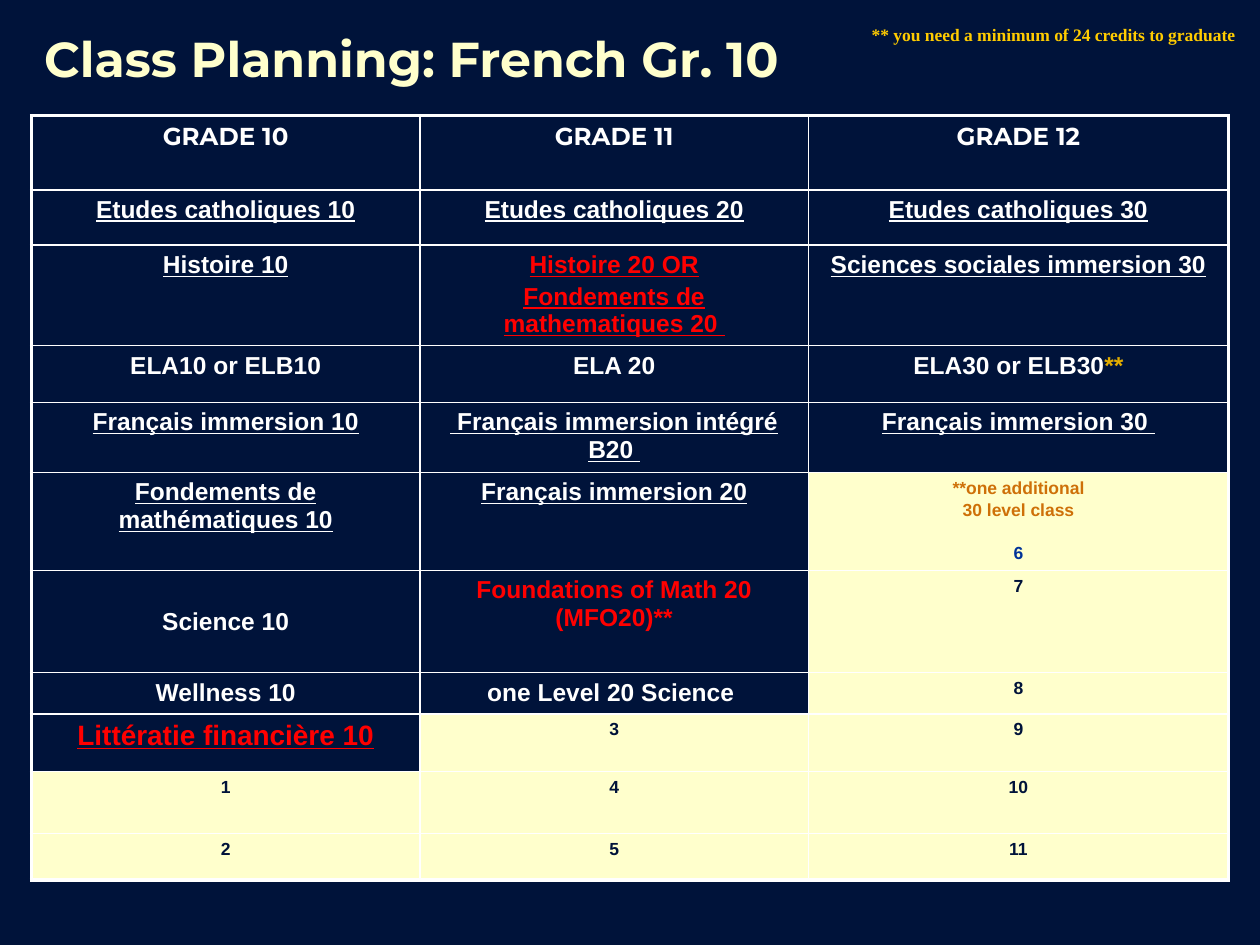
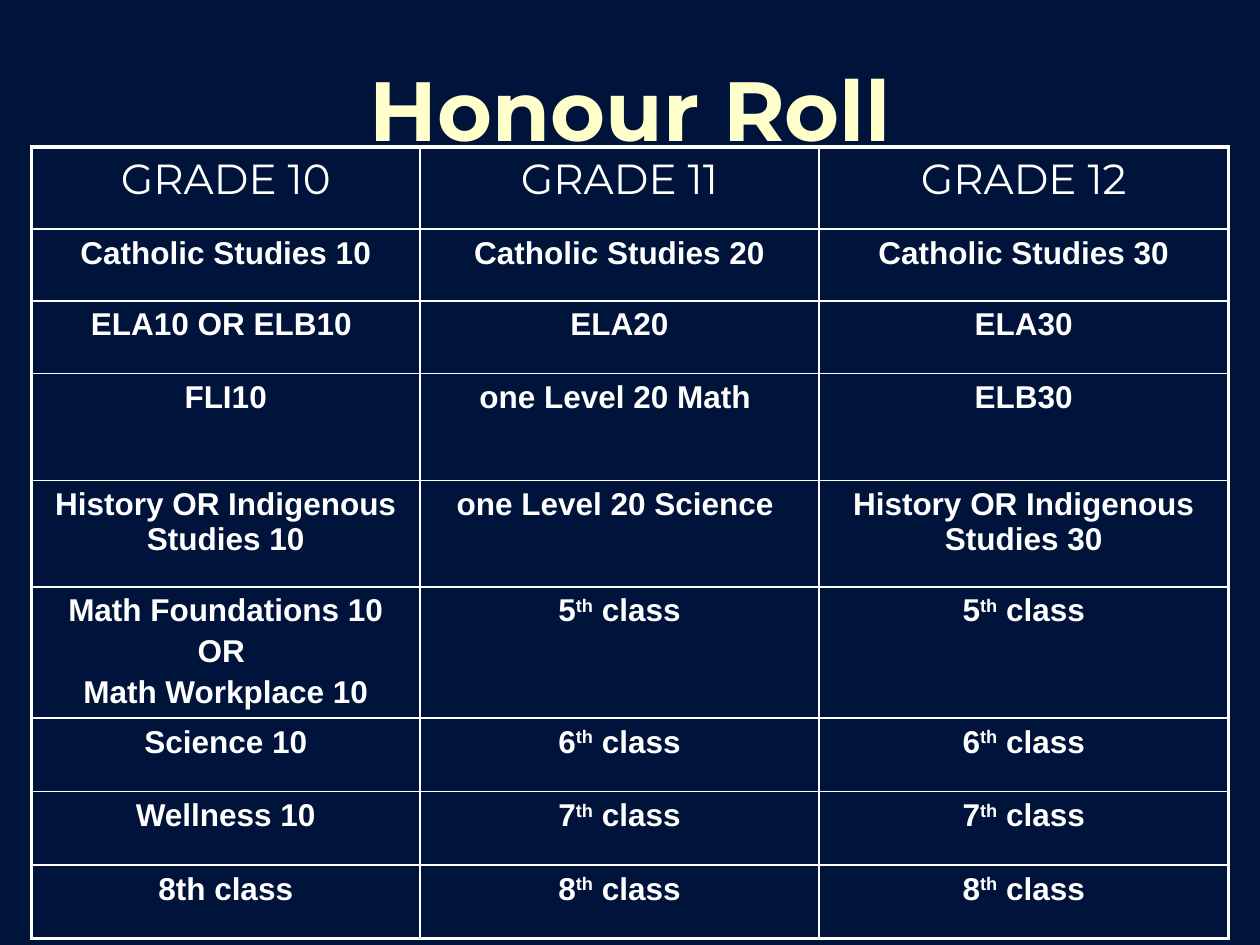
"""Build two course planning slides, each with a title and a grade table."""
from dataclasses import dataclass
from lxml import etree
from pptx import Presentation
from pptx import util as u
from pptx.dml.color import RGBColor
from pptx.enum import text as tx
from pptx.oxml.ns import qn


@dataclass(frozen=True)
class Theme:
    navy: str = "00133A"
    cream: str = "FFFFCC"
    white: str = "FFFFFF"
    red: str = "FF0000"
    gold: str = "E2AC00"
    rust: str = "CE7008"
    blue: str = "003399"
    amber: str = "FFCC00"
    head: str = "Montserrat"
    body: str = "Arial"
    serif: str = "Times New Roman"
    small: int = 10
    mid: int = 14
    large: int = 16
    big: int = 18
    edge: float = 2.25
    line: float = 1


T = Theme()

# name: size, colour, font, bold, underline
LOOKS = {
    "head": (T.mid, T.white, T.head, True, False),
    "plain": (T.mid, T.white, T.body, True, False),
    "under": (T.mid, T.white, T.body, True, True),
    "red": (T.mid, T.red, T.body, True, False),
    "redline": (T.mid, T.red, T.body, True, True),
    "money": (T.large, T.red, T.body, True, True),
    "star": (T.mid, T.gold, T.body, True, False),
    "free": (T.small, T.navy, T.body, True, False),
    "extra": (T.small, T.rust, T.body, True, False),
    "six": (T.small, T.blue, T.body, True, False),
    "top": (24, T.white, T.head, False, False),
    "class": (T.big, T.white, T.body, True, False),
    "super": (T.big, T.white, T.body, True, False),
    "plan": (28, T.cream, T.head, True, False),
    "honour": (48, T.cream, T.head, True, False),
    "note": (T.small, T.amber, T.serif, True, False),
}


def paint(run, look):
    size, hue, face, bold, under = LOOKS[look]
    font = run.font
    font.size, font.name, font.bold = u.Pt(size), face, bold
    font.underline = under
    font.color.rgb = RGBColor.from_string(hue)
    if look == "super":
        run._r.get_or_add_rPr().set("baseline", "30000")


def grid(slide, top, cols, rows, data):
    frame = slide.shapes.add_table(len(rows), len(cols), u.Pt(18), u.Pt(top),
                                   u.Pt(sum(cols)), u.Pt(sum(rows)))
    table = frame.table
    table.first_row = table.horz_banding = False
    for col, wide in zip(table.columns, cols):
        col.width = u.Pt(wide)
    for row, tall in zip(table.rows, rows):
        row.height = u.Pt(tall)
    for r, line in enumerate(data):
        for c, (looks, words) in enumerate(line):
            cell = table.cell(r, c)
            props = cell._tc.get_or_add_tcPr()
            outer = {"lnL": c == 0, "lnR": c == len(cols) - 1,
                     "lnT": r == 0, "lnB": r == len(rows) - 1}
            for side, edge in outer.items():
                width = u.Pt(T.edge if edge else T.line)
                rule = etree.SubElement(props, qn("a:" + side), w=str(int(width)))
                fill = etree.SubElement(rule, qn("a:solidFill"))
                etree.SubElement(fill, qn("a:srgbClr"), val=T.white)
            looks = looks.split()
            cell.fill.solid()
            free = looks[0] in ("free", "extra")
            cell.fill.fore_color.rgb = RGBColor.from_string(T.cream if free else T.navy)
            cell.text_frame.text = words
            for n, para in enumerate(cell.text_frame.paragraphs):
                para.alignment = tx.PP_ALIGN.CENTER
                if n:
                    para.space_before = u.Pt(round(LOOKS[looks[0]][0] * 0.17, 1))
                first, *rest = para.text.split("~")
                para.text = first
                for part in rest:
                    para.add_run().text = part
                for run in para.runs:
                    paint(run, looks.pop(0) if len(looks) > 1 else looks[0])
    return table


deck = Presentation()
deck.slide_width, deck.slide_height = u.Pt(720), u.Pt(540)
back = deck.slide_master.background.fill
back.solid()
back.fore_color.rgb = RGBColor.from_string(T.navy)

titles = [
    ("Class Planning: French Gr. 10", "plan", tx.PP_ALIGN.LEFT, (18, 10, 648, 54)),
    ("Honour Roll", "honour", tx.PP_ALIGN.CENTER, (54, 36, 612, 66)),
]
slides = []
for words, look, align, box in titles:
    slide = deck.slides.add_slide(deck.slide_layouts[5])
    title = slide.shapes.title
    title.left, title.top, title.width, title.height = map(u.Pt, box)
    body = title.text_frame
    body.text = words
    body.auto_size = tx.MSO_AUTO_SIZE.NONE
    body.vertical_anchor = tx.MSO_ANCHOR.MIDDLE
    para = body.paragraphs[0]
    para.alignment, para.line_spacing = align, 0.7
    paint(para.runs[0], look)
    slides.append(slide)
plan, honour = slides

courses = [
    [("head", f"GRADE {n}") for n in (10, 11, 12)],
    [("under", f"Etudes catholiques {n}") for n in (10, 20, 30)],
    [("under", "Histoire 10"),
     ("redline", "Histoire 20 OR\nFondements de mathematiques 20 "),
     ("under", "Sciences sociales immersion 30")],
    [("plain", "ELA10 or ELB10"), ("plain", "ELA 20"),
     ("plain star", "ELA30 or ELB30~**")],
    [("under", "Français immersion 10"),
     ("under", " Français immersion intégré B20 "),
     ("under", "Français immersion 30 ")],
    [("under", "Fondements de mathématiques 10"),
     ("under", "Français immersion 20"),
     ("extra extra six", "**one additional\n30 level class\n6")],
    [("plain", "Science 10"), ("red", "Foundations of Math 20 (MFO20)**"),
     ("free", "7")],
    [("plain", "Wellness 10"), ("plain", "one Level 20 Science "), ("free", "8")],
    [("money", "Littératie financière 10"), ("free", "3"), ("free", "9")],
    [("free", n) for n in ("1", "4", "10")],
    [("free", n) for n in ("2", "5", "11")],
]
table = grid(plan, 66, (222, 222, 240),
             (42.5, 31.5, 57.5, 32.5, 40, 56, 58.5, 23.5, 33, 35.5, 26.5), courses)
table.cell(5, 2).text_frame.paragraphs[2].space_before = u.Pt(13)
table.cell(6, 0).vertical_anchor = tx.MSO_ANCHOR.MIDDLE

note = plan.shapes.add_textbox(u.Pt(491), u.Pt(10), u.Pt(229), u.Pt(19.5))
note.text_frame.text = "** you need a minimum of 24 credits to graduate"
note.text_frame.word_wrap = True
paint(note.text_frame.paragraphs[0].runs[0], "note")

names = [
    [f"Catholic Studies {n}" for n in (10, 20, 30)],
    ["ELA10 OR ELB10 ", "ELA20", "ELA30"],
    ["FLI10", "one Level 20 Math ", "ELB30"],
    ["History OR Indigenous Studies 10", "one Level 20 Science ",
     "History OR Indigenous Studies 30"],
]
roll = [[("top", f"GRADE {n}") for n in (10, 11, 12)]]
roll += [[("class", name) for name in line] for line in names]
firsts = ("Math Foundations 10\nOR\u00a0\nMath Workplace 10".replace("\u00a0", " "),
          "Science 10", "Wellness 10", "8th class")
for n, first in enumerate(firsts, 5):
    roll.append([("class", first)] + [("class super class", f"{n}~th~ class")] * 2)
grid(honour, 84, (222, 228, 234), (47, 41, 41.5, 61, 61, 75, 42, 42, 42), roll)

deck.save("out.pptx")
